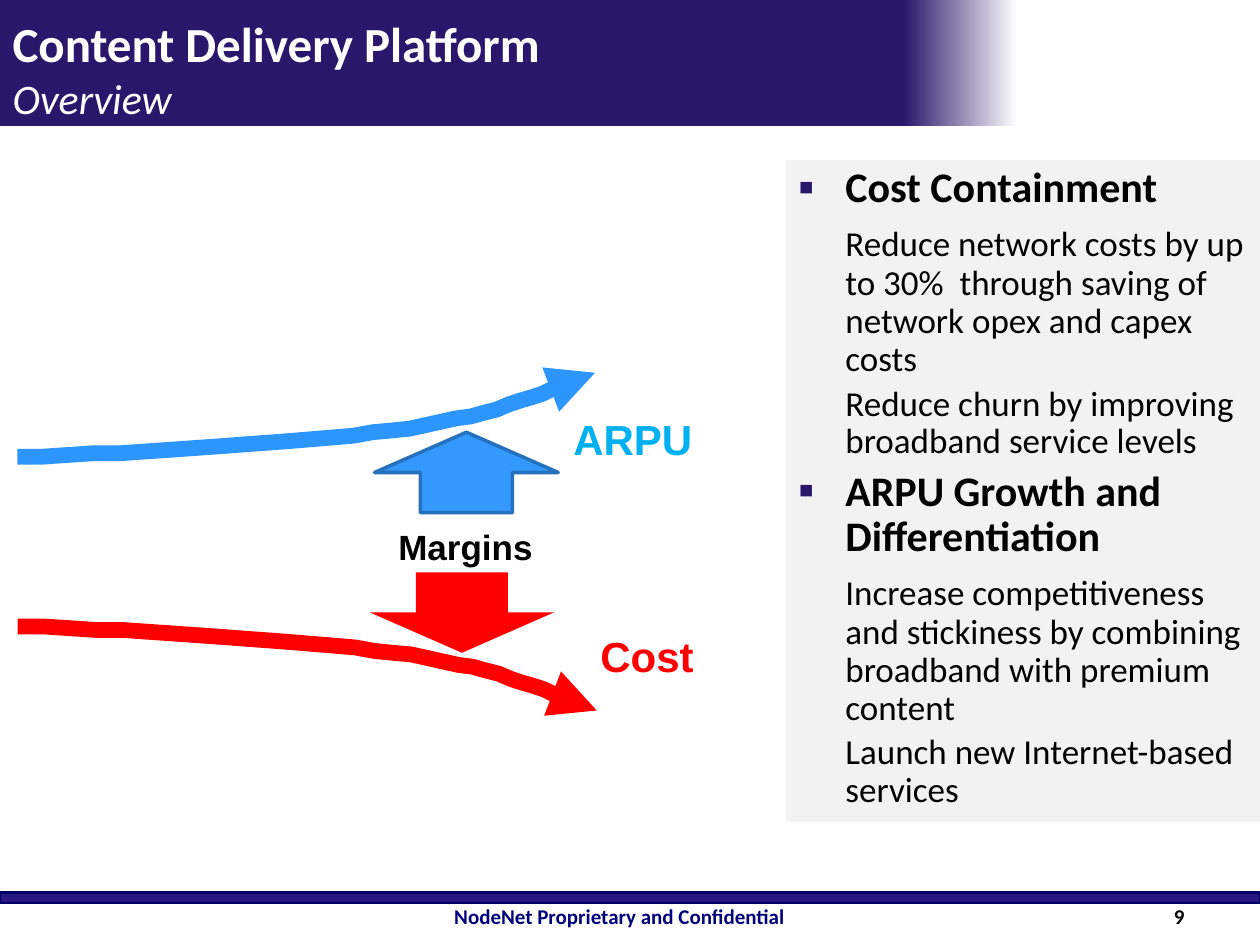
from lxml import etree
from pptx import Presentation
from pptx import util as u
from pptx.dml import color
from pptx.enum import shapes, text
from pptx.oxml import ns

NAVY, BLACK, WHITE, RED = "29176B", "000000", "FFFFFF", "FF0000"
HEAD = dict(size=24, bold=True)
BODY = dict(size=20, bold=False)
LEFT, MID, RIGHT = text.PP_ALIGN.LEFT, text.PP_ALIGN.CENTER, text.PP_ALIGN.RIGHT
TOP, CORE, BASE = (text.MSO_ANCHOR.TOP, text.MSO_ANCHOR.MIDDLE,
                   text.MSO_ANCHOR.BOTTOM)


def rgb(code):
    return color.RGBColor.from_string(code)


def sub(node, tag, **vals):
    return etree.SubElement(node, ns.qn(tag), vals)


def bezier(a, b, c, d, steps=16):
    """Points along a cubic curve, without its start."""
    for i in range(1, steps + 1):
        t = i / steps
        s = 1 - t
        yield tuple(s**3 * p + 3 * s * s * t * q + 3 * s * t * t * r + t**3 * e
                    for p, q, r, e in zip(a, b, c, d))


class Deck:
    def __init__(self, wide, high):
        self.prs = Presentation()
        self.prs.slide_width, self.prs.slide_height = u.Pt(wide), u.Pt(high)
        self.slide = self.prs.slides.add_slide(self.prs.slide_layouts[5])
        self.shapes = self.slide.shapes

    def style(self, font, tint, **form):
        """Set every given format value on a font."""
        form = dict(dict(name="Calibri"), **form)
        form["size"] = u.Pt(form["size"])
        for key, val in form.items():
            setattr(font, key, val)
        font.color.rgb = rgb(tint)

    def frame(self, shape, anchor, wrap=True):
        form = dict(word_wrap=wrap, auto_size=text.MSO_AUTO_SIZE.NONE,
                    vertical_anchor=anchor)
        for key, val in form.items():
            setattr(shape.text_frame, key, val)
        return shape.text_frame

    def run(self, para, words, tint, **form):
        run = para.add_run()
        run.text = words
        self.style(run.font, tint, **form)

    def title(self, box, main, minor):
        hold = self.shapes.title
        for key, val in zip(("left", "top", "width", "height"), box):
            setattr(hold, key, u.Pt(val))
        para = self.frame(hold, CORE).paragraphs[0]
        para.alignment = LEFT
        self.run(para, main, WHITE, size=28, bold=True)
        para.add_line_break()
        self.run(para, minor, WHITE, size=24, bold=False, italic=True)
        # Bring the title in front of the band
        self.shapes._spTree.append(hold._element)

    def shape(self, kind, box, fill, line=None, width=1):
        item = self.shapes.add_shape(kind, *map(u.Pt, box))
        item.shadow.inherit = False
        item.fill.solid()
        item.fill.fore_color.rgb = rgb(fill)
        if line:
            item.line.color.rgb = rgb(line)
            item.line.width = u.Pt(width)
        else:
            item.line.fill.background()
        return item

    def rect(self, *args):
        return self.shape(shapes.MSO_SHAPE.RECTANGLE, *args)

    def fade(self, box, *tints):
        fill = self.rect(box, tints[0]).fill
        fill.gradient()
        fill.gradient_angle = 0
        for stop, tint in zip(fill.gradient_stops, tints):
            stop.color.rgb = rgb(tint)

    def label(self, box, words, tint, align=LEFT, anchor=TOP, **form):
        item = self.shapes.add_textbox(*map(u.Pt, box))
        para = self.frame(item, anchor).paragraphs[0]
        para.alignment = align
        self.run(para, words, tint, bold=True, **form)

    def curve(self, pts, tint):
        """Thick arrow along two joined cubic curves."""
        path = [*bezier(*pts[:4]), *bezier(*pts[3:])]
        pen = self.shapes.build_freeform(*pts[0], scale=u.Pt(1))
        pen.add_line_segments(path, close=False)
        item = pen.convert_to_shape()
        item.shadow.inherit = False
        item.fill.background()
        item.line.color.rgb = rgb(tint)
        item.line.width = u.Pt(9)
        sub(item.line._get_or_add_ln(), "a:tailEnd", type="triangle")

    def panel(self, box, fill, rows):
        body = self.frame(self.rect(box, fill), TOP)
        for i, row in enumerate(rows):
            para = body.add_paragraph() if i else body.paragraphs[0]
            props = para._p.get_or_add_pPr()
            props.set("marL", str(u.Pt(27)))
            props.set("indent", str(-u.Pt(27)))
            if row[0][1] is HEAD and row[0][0] != "\t":
                sub(sub(props, "a:buClr"), "a:srgbClr", val=NAVY)
                sub(props, "a:buSzPct", val="110000")
                sub(props, "a:buFont", typeface="Arial")
                sub(props, "a:buChar", char="▪")
            else:
                sub(props, "a:buNone")
            para.alignment = LEFT
            para.line_spacing = 0.9
            para.space_before = u.Pt(row[0][1]["size"] * 0.2 if i else 0)
            for words, form in row:
                self.run(para, words, BLACK, **form)


def main():
    deck = Deck(720, 540)

    # Title band and footer
    deck.fade((516, 0, 66, 72), NAVY, WHITE)
    deck.rect((0, 0, 516, 72), NAVY)
    deck.rect((0, 510, 720, 6), "29177F", "000066", 1.5)
    deck.title((0, 18, 510, 42), "Content Delivery Platform", "Overview")
    deck.label((216, 498, 276, 36), "NodeNet Proprietary and Confidential",
               "00007D", MID, BASE, size=12)
    deck.label((612, 510, 72, 24), "9", BLACK, RIGHT, BASE, size=12)

    # Diverging curves: cost mirrors revenue
    rise = [(9.5, 261.2), (89, 257.8), (168.5, 254), (223.5, 246),
            (278.5, 238.5), (309, 225.5), (339.8, 213)]
    deck.curve(rise, "2D96FE")
    deck.curve([(x + 1, 619 - y) for x, y in rise], RED)
    deck.label((336, 357, 78.5, 36), "Cost", RED, name="Arial", size=24)
    deck.label((320.5, 232.5, 99.5, 36), "ARPU", "00B0F0", name="Arial", size=24)

    # Margin arrows
    down = shapes.MSO_SHAPE.DOWN_ARROW
    deck.shape(down, (214, 247, 105, 46), "3399FF", "2671BD", 2).rotation = 180
    deck.shape(down, (211.5, 327, 105, 46), RED)
    deck.label((220.5, 296.5, 99, 32), "Margins", BLACK, name="Arial", size=20)

    # Benefits panel
    deck.panel((449, 91.5, 271, 378), "F2F2F2", [
        [("Cost Containment", HEAD)],
        [("\t", HEAD), ("Reduce network costs by up to 30%  through saving of "
                        "network opex and capex costs", BODY)],
        [("\tReduce churn by improving broadband service levels", BODY)],
        [("ARPU Growth and Differentiation", HEAD)],
        [("\t", HEAD), ("Increase competitiveness and stickiness by combining "
                        "broadband with premium content", BODY)],
        [("\tLaunch new Internet-based services", BODY)],
    ])
    deck.prs.save("out.pptx")


if __name__ == "__main__":
    main()
